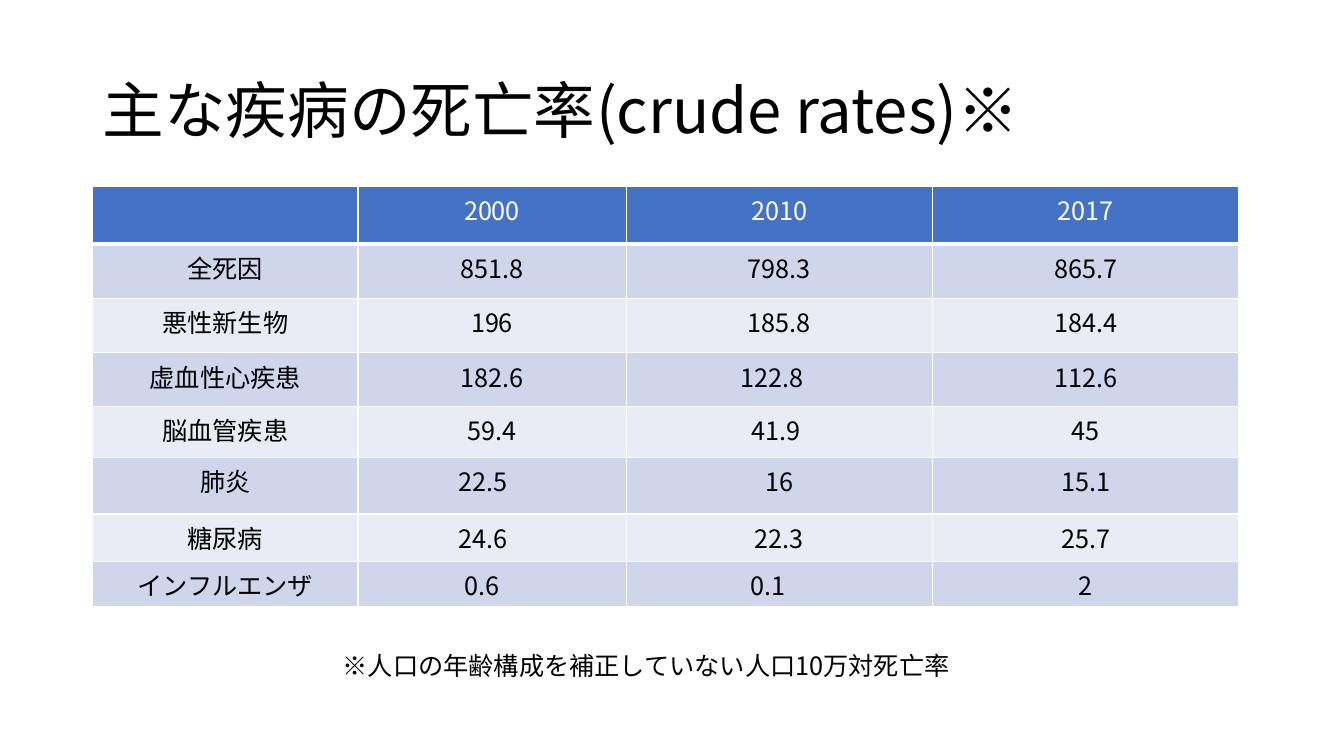
import pptx
import pptx.dml.color
import pptx.enum.text
import pptx.oxml.ns
import pptx.util
from lxml import etree

FONT = "Noto Sans CJK JP"
MIDDLE = pptx.enum.text.MSO_ANCHOR.MIDDLE
CENTER = pptx.enum.text.PP_ALIGN.CENTER
qn = pptx.oxml.ns.qn
Inches = pptx.util.Inches


def rgb(value):
    return pptx.dml.color.RGBColor.from_string(value)


def write(tf, text, size, color, **para):
    p = tf.paragraphs[0]
    for name, value in para.items():
        setattr(p, name, value)
    r = p.add_run()
    r.text = text
    look = {"name": FONT, "size": pptx.util.Pt(size), "bold": False}
    for name, value in look.items():
        setattr(r.font, name, value)
    r.font.color.rgb = rgb(color)
    etree.SubElement(r.font._element, qn("a:ea"), typeface=FONT)


prs = pptx.Presentation()
prs.slide_width, prs.slide_height = Inches(13.33), Inches(7.5)
s = prs.slides.add_slide(prs.slide_layouts[6])

# Title and footnote: box, text, size, frame format, paragraph format
texts = [
    ((0.92, 0.4, 11.5, 1.45), "主な疾病の死亡率(crude rates)※", 44,
     {"word_wrap": True, "vertical_anchor": MIDDLE}, {"line_spacing": 0.9}),
    ((3.3, 6.4, 6.56, 0.4), "※人口の年齢構成を補正していない人口10万対死亡率", 18,
     {"word_wrap": True}, {}),
]
for box, text, size, frame, para in texts:
    tf = s.shapes.add_textbox(*map(Inches, box)).text_frame
    for name, value in frame.items():
        setattr(tf, name, value)
    write(tf, text, size, "000000", **para)

# Death rates by cause and year
rates = [
    ["", "2000", "2010", "2017"],
    ["全死因", "851.8", "798.3", "865.7"],
    ["悪性新生物", "196", "185.8", "184.4"],
    ["虚血性心疾患", "182.6", "122.8", "112.6"],
    ["脳血管疾患", "59.4", "41.9", "45"],
    ["肺炎", "22.5", "16", "15.1"],
    ["糖尿病", "24.6", "22.3", "25.7"],
    ["インフルエンザ", "0.6", "0.1", "2"],
]
widths = [2.63, 2.66, 3.04, 3.04]
heights = [0.57, 0.54, 0.54, 0.53, 0.51, 0.56, 0.47, 0.45]
# Extra right margin of the values that sit left of centre, by (row, column)
shifts = {(3, 2): 0.15, (4, 2): 0.07, (5, 1): 0.18,
          (6, 1): 0.18, (7, 1): 0.2, (7, 2): 0.22}

table = s.shapes.add_table(len(rates), len(widths), Inches(0.92), Inches(1.85),
                           Inches(sum(widths)), Inches(sum(heights))).table
for column, width in zip(table.columns, widths):
    column.width = Inches(width)

for i, (row, height) in enumerate(zip(rates, heights)):
    table.rows[i].height = Inches(height)
    fill = "4472C4" if i == 0 else ("E9EBF5", "CFD5EA")[i % 2]
    for j, text in enumerate(row):
        cell = table.cell(i, j)
        cell.margin_right = Inches(0.1 + shifts.get((i, j), 0))

        # White cell borders, thicker under the header
        tcPr = cell._tc.get_or_add_tcPr()
        for side in ("lnL", "lnR", "lnT", "lnB"):
            points = 3 if i == 0 and side == "lnB" else 1
            ln = etree.SubElement(tcPr, qn("a:" + side), w=str(pptx.util.Pt(points)))
            line = etree.SubElement(ln, qn("a:solidFill"))
            etree.SubElement(line, qn("a:srgbClr"), val="FFFFFF")

        cell.fill.solid()
        cell.fill.fore_color.rgb = rgb(fill)
        if text:
            write(cell.text_frame, text, 18, "000000" if i else "FFFFFF",
                  alignment=CENTER)

prs.save("out.pptx")
